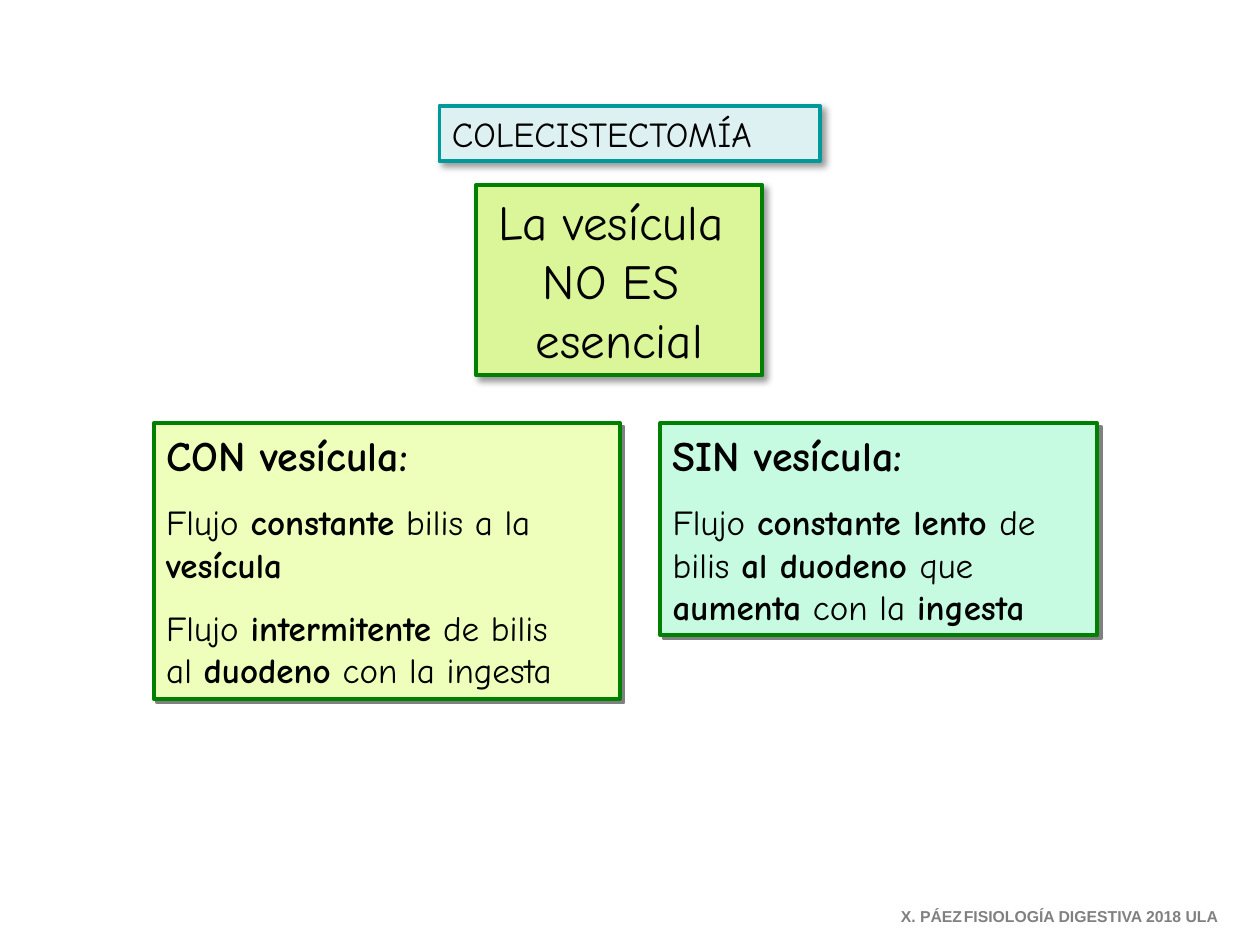
from lxml.etree import SubElement
from pptx import Presentation
from pptx.dml.color import RGBColor
from pptx.enum.shapes import MSO_SHAPE
from pptx.enum.text import MSO_ANCHOR, MSO_AUTO_SIZE, PP_ALIGN
from pptx.oxml.ns import qn
from pptx.util import Cm, Pt

BLACK = RGBColor(0x00, 0x00, 0x00)
GRAY = RGBColor(0x80, 0x80, 0x80)
TEAL = RGBColor(0x00, 0x99, 0x99)
GREEN = RGBColor(0x00, 0x80, 0x00)
PALE_BLUE = RGBColor(0xDE, 0xF1, 0xF2)
LIME = RGBColor(0xDB, 0xF5, 0x99)
PALE_YELLOW = RGBColor(0xED, 0xFF, 0xBB)
MINT = RGBColor(0xC7, 0xFB, 0xE1)

SOFT_SHADOW = {"color": BLACK, "alpha": 40, "blur": 4, "distance": 3}
HARD_SHADOW = {"color": GRAY, "alpha": 100, "blur": 0, "distance": 2.8}

TITLE_FONT = {"name": "Comic Neue", "size": Pt(20), "bold": False}
MESSAGE_FONT = {**TITLE_FONT, "size": Pt(28)}
HEADING_FONT = {**TITLE_FONT, "size": Pt(24)}
FOOTER_FONT = {"name": "Arial", "size": Pt(9), "bold": True}
CARD_GAP = Pt(12)


def apply_format(target, values):
    for name, value in values.items():
        setattr(target, name, value)


def place(shape, box):
    """Put a shape at box, given as left, top, width, height in cm."""
    names = ("left", "top", "width", "height")
    apply_format(shape, dict(zip(names, map(Cm, box))))


def style_panel(shape, fill, line, shadow):
    shape.fill.solid()
    shape.fill.fore_color.rgb = fill
    shape.line.color.rgb = line
    shape.line.width = Pt(2.25)
    shape.shadow.inherit = False
    effects = shape._element.spPr.find(qn("a:effectLst"))
    outer = SubElement(effects, qn("a:outerShdw"), {
        "blurRad": str(Pt(shadow["blur"])),
        "dist": str(Pt(shadow["distance"])),
        "dir": "2700000", "algn": "tl", "rotWithShape": "0"})
    color = SubElement(outer, qn("a:srgbClr"), val=str(shadow["color"]))
    SubElement(color, qn("a:alpha"), val=str(shadow["alpha"] * 1000))


def prepare_frame(shape, wrap=True):
    frame = shape.text_frame
    apply_format(frame, {
        "word_wrap": wrap, "auto_size": MSO_AUTO_SIZE.NONE,
        "vertical_anchor": MSO_ANCHOR.TOP,
        "margin_left": Cm(0.25), "margin_right": Cm(0.25),
        "margin_top": Cm(0.13), "margin_bottom": Cm(0.13)})
    return frame


def write_paragraph(para, text, font, color=BLACK, align=PP_ALIGN.LEFT, gap=0):
    """Write text without a bullet; parts between asterisks are bold."""
    apply_format(para, {"alignment": align, "line_spacing": 1.0,
                        "space_before": gap, "space_after": 0})
    properties = para._p.get_or_add_pPr()
    properties.set("marL", "0")
    properties.set("indent", "0")
    SubElement(properties, qn("a:buNone"))
    for index, part in enumerate(text.split("*")):
        if part:
            span = para.add_run()
            span.text = part
            apply_format(span.font, font)
            span.font.color.rgb = color
            if index % 2:
                span.font.bold = True


def write_lines(frame, lines):
    """Write (text, font, align, gap) lines, one paragraph each."""
    for index, (text, font, align, gap) in enumerate(lines):
        para = frame.add_paragraph() if index else frame.paragraphs[0]
        write_paragraph(para, text, font, align=align, gap=gap)


def build_title(page, box):
    title = page.shapes.title
    place(title, box)
    style_panel(title, PALE_BLUE, TEAL, SOFT_SHADOW)
    write_lines(prepare_frame(title),
                [("COLECISTECTOMÍA", TITLE_FONT, PP_ALIGN.LEFT, 0)])


def build_message(page, box):
    panel = page.shapes.add_shape(MSO_SHAPE.RECTANGLE, *map(Cm, box))
    style_panel(panel, LIME, GREEN, SOFT_SHADOW)
    write_lines(prepare_frame(panel),
                [(text, MESSAGE_FONT, PP_ALIGN.CENTER, 0)
                 for text in ("La vesícula ", "NO ES ", "esencial")])


def build_card(body, box, fill, heading, points):
    """Fill a body placeholder with a heading and (text, gap) points."""
    place(body, box)
    style_panel(body, fill, GREEN, HARD_SHADOW)
    lines = [(f"*{heading}*", HEADING_FONT, PP_ALIGN.LEFT, 0)]
    lines += [(text, TITLE_FONT, PP_ALIGN.LEFT, gap) for text, gap in points]
    write_lines(prepare_frame(body), lines)


def build_footer(page, box):
    footer = page.shapes.add_textbox(*map(Cm, box))
    para = prepare_frame(footer, wrap=False).paragraphs[0]
    write_paragraph(para, "X. PÁEZ\tFISIOLOGÍA DIGESTIVA 2018 ULA",
                    FOOTER_FONT, GRAY)
    tabs = SubElement(para._p.get_or_add_pPr(), qn("a:tabLst"))
    SubElement(tabs, qn("a:tab"), pos=str(Cm(1.5)), algn="l")


def main():
    deck = Presentation()
    deck.slide_width, deck.slide_height = Cm(25.4), Cm(19.05)
    page = deck.slides.add_slide(deck.slide_layouts.get_by_name("Two Content"))
    with_gallbladder, without_gallbladder = list(page.placeholders)[1:]

    build_title(page, (8.86, 2.13, 7.67, 1.12))
    build_card(with_gallbladder, (3.1, 8.53, 9.4, 5.56), PALE_YELLOW,
               "CON vesícula:",
               [("Flujo *constante* bilis a la *vesícula*", CARD_GAP),
                ("Flujo *intermitente* de bilis", CARD_GAP),
                ("al *duodeno* con la ingesta", 0)])
    build_message(page, (9.6, 3.73, 5.77, 3.84))
    build_card(without_gallbladder, (13.31, 8.53, 8.81, 4.27), MINT,
               "SIN vesícula:",
               [("Flujo *constante lento *de bilis *al duodeno *que "
                 "*aumenta* con la *ingesta*", CARD_GAP)])
    build_footer(page, (17.91, 18.14, 7.37, 0.63))
    deck.save("out.pptx")


if __name__ == "__main__":
    main()
